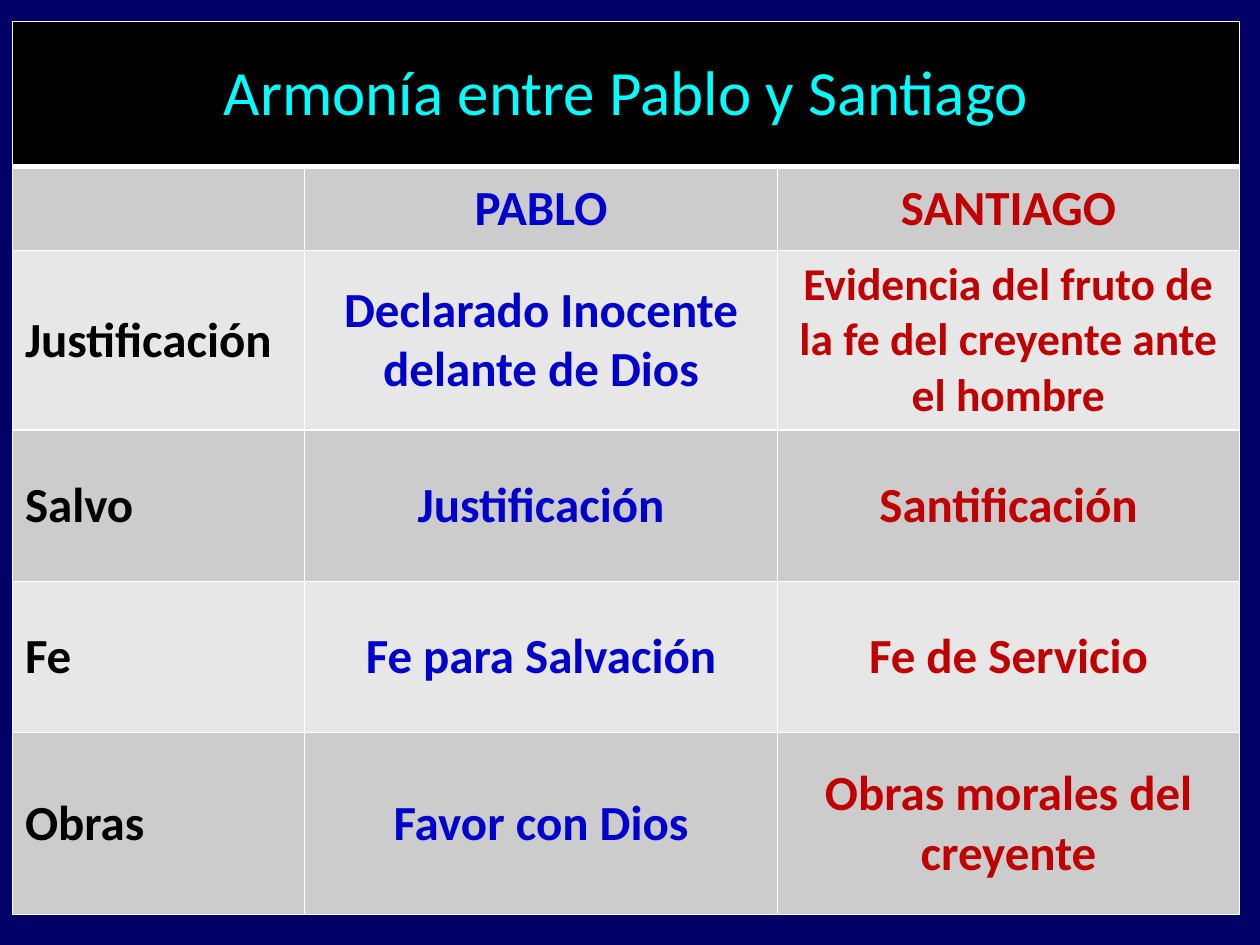
from dataclasses import dataclass

from lxml import etree
from pptx import Presentation
from pptx.dml.color import RGBColor
from pptx.enum.text import MSO_ANCHOR, PP_ALIGN
from pptx.oxml.ns import qn
from pptx.table import _Cell
from pptx.util import Cm, Pt

LEFT, CENTER = PP_ALIGN.LEFT, PP_ALIGN.CENTER
MIDDLE = MSO_ANCHOR.MIDDLE


@dataclass(frozen=True)
class Theme:
    font: str = "Calibri"
    back: str = "000066"
    head: str = "000000"
    title: str = "00FFFF"
    bands: tuple = ("CCCCCC", "E7E7E7")
    inks: tuple = ("000000", "0000CC", "C00000")
    rule: str = "FFFFFF"
    thin: int = 1
    thick: int = 3
    big: int = 36
    body: int = 28
    small: int = 26


@dataclass(frozen=True)
class Row:
    height: float
    texts: tuple


THEME = Theme()
TITLE = Row(2.92, ("Armonía entre Pablo y Santiago", "", ""))
ROWS = (
    Row(1.7, ("", "PABLO", "SANTIAGO")),
    Row(3.61, ("Justificación", "Declarado Inocente delante de Dios",
               "Evidencia del fruto de la fe del creyente ante el hombre")),
    Row(3.05, ("Salvo", "Justificación", "Santificación")),
    Row(3.05, ("Fe", "Fe para Salvación", "Fe de Servicio")),
    Row(3.66, ("Obras", "Favor con Dios", "Obras morales del creyente")),
)
WIDTHS = (5.89, 9.53, 9.32)
LONG = 40  # longer texts take the small size


def set_rules(cell: _Cell, top: int, base: int) -> None:
    """Draw the four borders; they must come before the cell fill."""
    props = cell._tc.get_or_add_tcPr()
    sides = {"L": THEME.thin, "R": THEME.thin, "T": top, "B": base}
    for side, width in sides.items():
        line = etree.SubElement(props, qn(f"a:ln{side}"), w=str(Pt(width)))
        fill = etree.SubElement(line, qn("a:solidFill"))
        etree.SubElement(fill, qn("a:srgbClr"), val=THEME.rule)


def set_fill(cell: _Cell, color: str) -> None:
    cell.fill.solid()
    cell.fill.fore_color.rgb = RGBColor.from_string(color)


def set_text(cell: _Cell, text: str, size: int, color: str,
             bold: bool, align: PP_ALIGN) -> None:
    cell.vertical_anchor = MIDDLE
    para = cell.text_frame.paragraphs[0]
    para.text = text
    para.alignment = align
    font = para.font
    font.name, font.size, font.bold = THEME.font, Pt(size), bold
    font.color.rgb = RGBColor.from_string(color)


def main() -> None:
    deck = Presentation()
    deck.slide_width, deck.slide_height = Cm(25.4), Cm(19.05)
    slide = deck.slides.add_slide(deck.slide_layouts[6])
    slide.background.fill.solid()
    slide.background.fill.fore_color.rgb = RGBColor.from_string(THEME.back)

    # Table grid
    rows = (TITLE, *ROWS)
    frame = slide.shapes.add_table(
        len(rows), len(WIDTHS), Cm(0.25), Cm(0.43),
        Cm(sum(WIDTHS)), Cm(sum(row.height for row in rows)))
    table = frame.table
    for col, width in zip(table.columns, WIDTHS):
        col.width = Cm(width)
    for line, row in zip(table.rows, rows):
        line.height = Cm(row.height)

    # Title row
    for cell in table.rows[0].cells:
        set_rules(cell, THEME.thin, THEME.thick)
        set_fill(cell, THEME.head)
    head = table.cell(0, 0)
    head.merge(table.cell(0, len(WIDTHS) - 1))
    set_text(head, TITLE.texts[0], THEME.big, THEME.title, False, CENTER)

    # Body rows, in two bands, with one ink per column
    for i, row in enumerate(ROWS):
        for j, text in enumerate(row.texts):
            cell = table.cell(i + 1, j)
            set_rules(cell, THEME.thin if i else THEME.thick, THEME.thin)
            set_fill(cell, THEME.bands[i % 2])
            if text:
                size = THEME.small if len(text) > LONG else THEME.body
                set_text(cell, text, size, THEME.inks[j], True,
                         CENTER if j else LEFT)

    deck.save("out.pptx")


if __name__ == "__main__":
    main()
